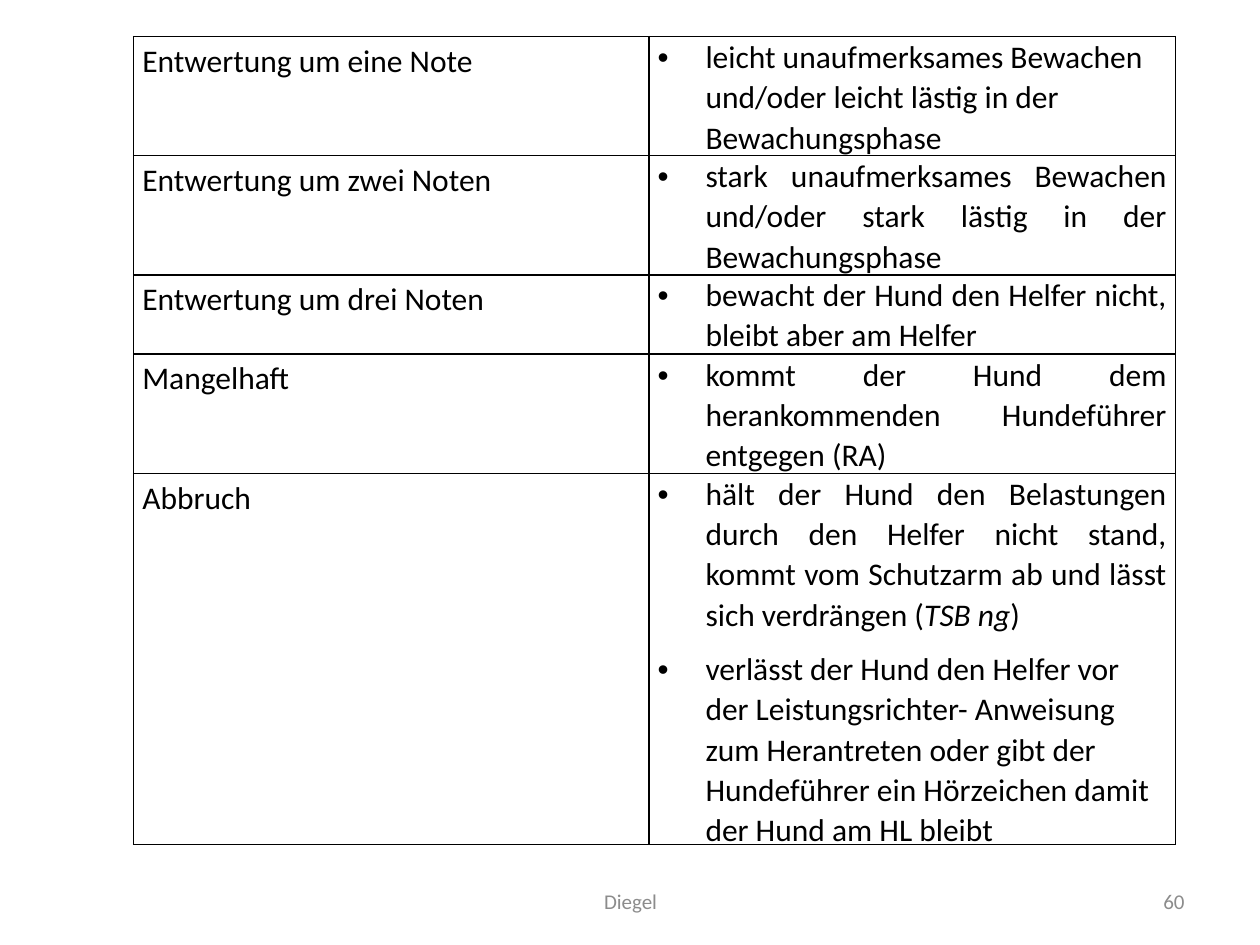
from lxml.etree import SubElement
from pptx import Presentation
from pptx.dml.color import RGBColor
from pptx.enum.text import MSO_ANCHOR as Anchor, PP_ALIGN as Align
from pptx.oxml import parse_xml
from pptx.oxml.ns import nsdecls, qn
from pptx.util import Emu, Inches, Pt

COLORS = {"text": "000000", "border": "000000", "footer": "8C8C8C"}
FONT = "Calibri"
SLIDE_W, SLIDE_H = Inches(10), Inches(7.5)

# Each deduction: label, then its faults as (alignment, text pieces);
# every second piece of a fault is italic.
DEDUCTIONS = [
    ("Entwertung um eine Note", [
        (Align.LEFT, ["leicht unaufmerksames Bewachen und/oder leicht lästig in der "
                      "Bewachungsphase"])]),
    ("Entwertung um zwei Noten", [
        (Align.JUSTIFY, ["stark unaufmerksames Bewachen und/oder stark lästig in der "
                         "Bewachungsphase"])]),
    ("Entwertung um drei Noten", [
        (Align.JUSTIFY, ["bewacht der Hund den Helfer nicht, bleibt aber am Helfer"])]),
    ("Mangelhaft", [
        (Align.JUSTIFY, ["kommt der Hund dem herankommenden Hundeführer entgegen (RA)"])]),
    ("Abbruch", [
        (Align.JUSTIFY, ["hält der Hund den Belastungen durch den Helfer nicht stand, kommt "
                         "vom Schutzarm ab und lässt sich verdrängen (", "TSB ng", ")"]),
        (Align.LEFT, ["verlässt der Hund den Helfer vor der Leistungsrichter- Anweisung zum "
                      "Herantreten oder gibt der Hundeführer ein Hörzeichen damit der Hund "
                      "am HL bleibt"])]),
]
COLUMN_WIDTHS = [4.09, 4.18]
ROW_HEIGHTS = [0.91, 0.91, 0.6, 0.91, 2.89]


def share_box(left, top, width, height):
    """Turn shares of the slide into a box of lengths."""
    return [Emu(int(share * side)) for share, side in
            zip((left, top, width, height), (SLIDE_W, SLIDE_H) * 2)]


def style_run(run, size, color, italic=False):
    run.font.name = FONT
    run.font.size = Pt(size)
    run.font.italic = italic
    run.font.color.rgb = RGBColor.from_string(COLORS[color])


def space_paragraph(paragraph, align, line, after):
    paragraph.alignment = align
    paragraph.line_spacing = line
    paragraph.space_after = Pt(after)


def add_bullet(paragraph):
    props = paragraph._p.get_or_add_pPr()
    props.set("marL", str(Inches(0.38)))
    props.set("indent", str(-Inches(0.38)))
    SubElement(props, qn("a:buFont"), typeface="Arial")
    SubElement(props, qn("a:buChar"), char="•")
    tabs = SubElement(props, qn("a:tabLst"))
    SubElement(tabs, qn("a:tab"), pos=str(Inches(0.5)), algn="l")


def frame_cell(cell):
    """Clear the fill, set the margins and draw all four borders."""
    cell.fill.background()
    cell.margin_left = cell.margin_right = Inches(0.07)
    cell.margin_top = cell.margin_bottom = 0
    props = cell._tc.get_or_add_tcPr()
    for position, side in enumerate(("lnL", "lnR", "lnT", "lnB")):
        props.insert(position, parse_xml(
            f'<a:{side} {nsdecls("a")} w="{Pt(1)}"><a:solidFill>'
            f'<a:srgbClr val="{COLORS["border"]}"/></a:solidFill></a:{side}>'))


def fill_label(cell, label):
    frame_cell(cell)
    cell.text_frame.text = label
    paragraph = cell.text_frame.paragraphs[0]
    space_paragraph(paragraph, Align.JUSTIFY, 1.15, 10)
    style_run(paragraph.runs[0], 18, "text")


def fill_faults(cell, faults):
    frame_cell(cell)
    frame = cell.text_frame
    for number, (align, pieces) in enumerate(faults):
        paragraph = frame.add_paragraph() if number else frame.paragraphs[0]
        space_paragraph(paragraph, align, 1.05, 8)
        add_bullet(paragraph)
        for index, piece in enumerate(pieces):
            run = paragraph.add_run()
            run.text = piece
            style_run(run, 18, "text", italic=index % 2 == 1)


def add_deductions(slide, box):
    """Table of deductions, its columns and rows shared out over the box."""
    left, top, width, height = box
    table = slide.shapes.add_table(len(DEDUCTIONS), 2, left, top, width, height).table
    table.first_row = table.horz_banding = False
    for column, part in zip(table.columns, COLUMN_WIDTHS):
        column.width = Emu(int(width * part / sum(COLUMN_WIDTHS)))
    for row, part, (label, faults) in zip(table.rows, ROW_HEIGHTS, DEDUCTIONS):
        row.height = Emu(int(height * part / sum(ROW_HEIGHTS)))
        fill_label(row.cells[0], label)
        fill_faults(row.cells[1], faults)


def add_footer(slide, box, wording, align):
    frame = slide.shapes.add_textbox(*box).text_frame
    frame.word_wrap = True
    frame.vertical_anchor = Anchor.MIDDLE
    frame.text = wording
    paragraph = frame.paragraphs[0]
    paragraph.alignment = align
    style_run(paragraph.runs[0], 12, "footer")


def main():
    deck = Presentation()
    deck.slide_width, deck.slide_height = SLIDE_W, SLIDE_H
    slide = deck.slides.add_slide(deck.slide_layouts[6])

    # Footer: author and page number
    footer_top, footer_height = 0.9267, 0.0533
    add_footer(slide, share_box(0.342, footer_top, 0.317, footer_height),
               "Diegel", Align.CENTER)
    add_footer(slide, share_box(0.717, footer_top, 0.233, footer_height),
               "60", Align.RIGHT)

    # Deductions and their faults
    add_deductions(slide, share_box(0.106, 0.0387, 0.827, 0.83))
    deck.save("out.pptx")


if __name__ == "__main__":
    main()
